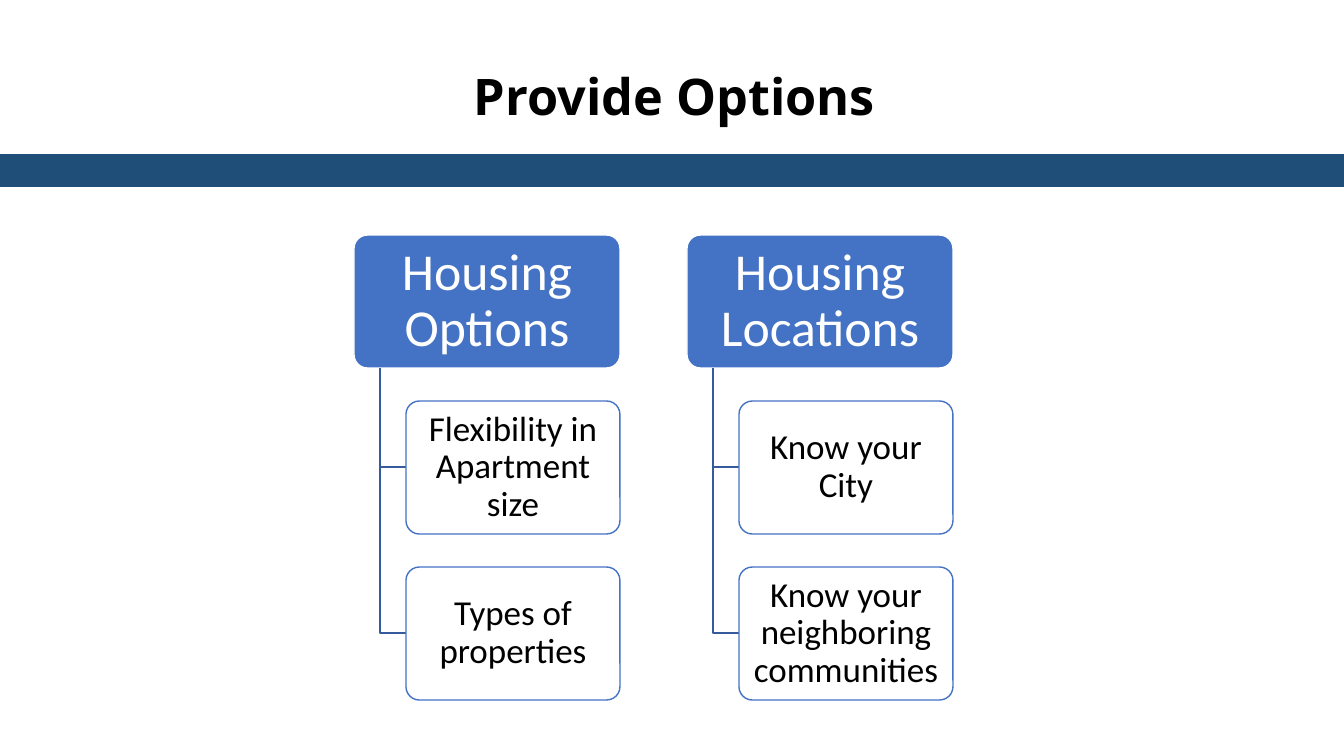
from lxml import etree
from pptx import Presentation
from pptx.dml.color import RGBColor
from pptx.enum.shapes import MSO_SHAPE
from pptx.enum.text import MSO_ANCHOR, PP_ALIGN
from pptx.oxml.ns import qn
from pptx.util import Emu, Pt

RECT = MSO_SHAPE.RECTANGLE
ROUNDED = MSO_SHAPE.ROUNDED_RECTANGLE
MIDDLE = MSO_ANCHOR.MIDDLE
CENTER = PP_ALIGN.CENTER

WHITE = RGBColor(0xFF, 0xFF, 0xFF)
BLACK = RGBColor(0x00, 0x00, 0x00)
NAVY = RGBColor(0x1F, 0x4E, 0x79)
BLUE = RGBColor(0x44, 0x72, 0xC4)
BRANCH_BLUE = RGBColor(0x36, 0x5B, 0x9D)

EMU_PER_PX = 914400 / 100.8


def px(length):
    return Emu(round(length * EMU_PER_PX))


def add_card(left, top, width, text, size, color, fill, line, inset_x, inset_y):
    card = slide.shapes.add_shape(ROUNDED, px(left), px(top), px(width), px(CARD_HEIGHT))
    card.adjustments[0] = 0.1
    card.shadow.inherit = False
    card.fill.solid()
    card.fill.fore_color.rgb = fill
    card.line.color.rgb = line
    card.line.width = Pt(1)
    frame = card.text_frame
    frame.word_wrap = True
    frame.vertical_anchor = MIDDLE
    frame.margin_left = frame.margin_right = px(inset_x)
    frame.margin_top = frame.margin_bottom = px(inset_y)
    frame.text = text
    paragraph = frame.paragraphs[0]
    paragraph.alignment = CENTER
    paragraph.line_spacing = 0.9
    font = paragraph.runs[0].font
    font.name = "Calibri"
    font.size = Pt(size)
    font.color.rgb = color
    return card


prs = Presentation()
prs.slide_width = px(1344)
prs.slide_height = px(756)
slide = prs.slides.add_slide(prs.slide_layouts[6])

title = slide.shapes.add_textbox(px(58), px(65), px(1233), px(146)).text_frame
title.word_wrap = True
title.margin_top = 0
title.text = "Provide Options"
title.paragraphs[0].alignment = CENTER
title_font = title.paragraphs[0].runs[0].font
title_font.name = "Open Sans"
title_font.size = Pt(36)
title_font.bold = True
title_font.color.rgb = BLACK

band = slide.shapes.add_shape(RECT, 0, px(155), px(1344), px(31))
band.shadow.inherit = False
band.fill.solid()
band.fill.fore_color.rgb = NAVY
band.line.color.rgb = NAVY
band.line.width = Pt(1)

TOPICS = [
    ("Housing Options", ["Flexibility in Apartment size", "Types of properties"]),
    ("Housing Locations", ["Know your City", "Know your neighboring communities"]),
]
TOPIC_LEFT, TOPIC_TOP, TOPIC_WIDTH, TOPIC_STEP = 354, 235, 266, 333
CARD_HEIGHT, ROW_STEP = 133, 166
INDENT = 26
DETAIL_WIDTH = TOPIC_WIDTH - 2 * INDENT

for column, (topic, details) in enumerate(TOPICS):
    left = TOPIC_LEFT + column * TOPIC_STEP
    trunk = left + INDENT
    detail_left = trunk + INDENT
    add_card(left, TOPIC_TOP, TOPIC_WIDTH, topic, 37, WHITE, BLUE, WHITE, 8, 5)

    for row, detail in enumerate(details, 1):
        top = TOPIC_TOP + row * ROW_STEP
        middle = top + CARD_HEIGHT // 2
        builder = slide.shapes.build_freeform(trunk, TOPIC_TOP + CARD_HEIGHT, scale=EMU_PER_PX)
        builder.add_line_segments([(trunk, middle), (detail_left, middle)], close=False)
        branch = builder.convert_to_shape()
        branch.shadow.inherit = False
        branch.fill.background()
        branch.line.color.rgb = BRANCH_BLUE
        branch.line.width = Pt(1)

        card = add_card(detail_left, top, DETAIL_WIDTH, detail, 25, BLACK, WHITE, BLUE, 5, 3)
        fill_color = card.fill._xPr.find(qn("a:solidFill"))[0]
        etree.SubElement(fill_color, qn("a:alpha")).set("val", "90000")

prs.save("out.pptx")
